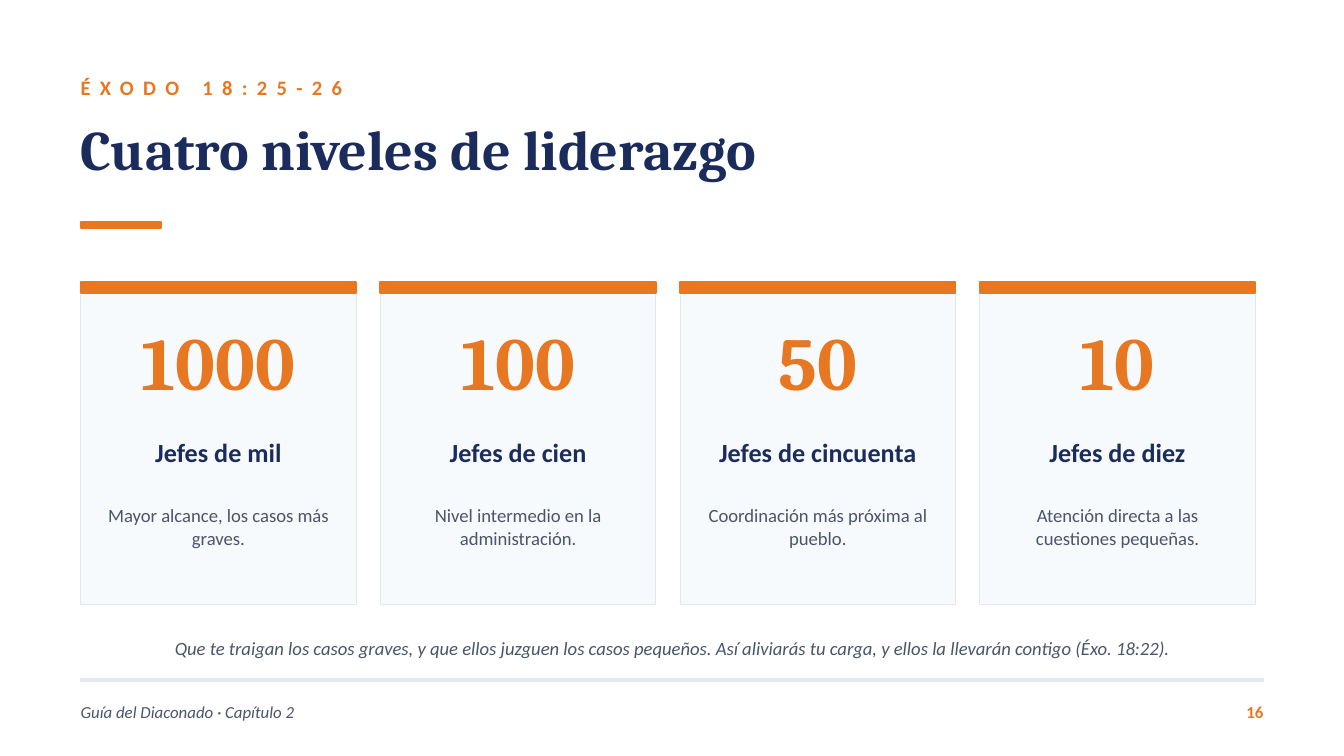
import pptx
import pptx.dml.color
import pptx.enum.shapes
import pptx.enum.text
import pptx.util

Inches = pptx.util.Inches
ORANGE, NAVY, GRAY = "E87722", "1A2B5C", "4A5568"
PALE, BORDER = "F7FAFC", "E2E8F0"


def color(value):
    return pptx.dml.color.RGBColor.from_string(value)


class Deck:
    """Holds the style and the current slide, and draws each kind of element."""

    heading, body = "Cambria", "Calibri"
    aligns = {
        "l": pptx.enum.text.PP_ALIGN.LEFT,
        "c": pptx.enum.text.PP_ALIGN.CENTER,
        "r": pptx.enum.text.PP_ALIGN.RIGHT,
    }

    def __init__(self, prs):
        self.s = prs.slides.add_slide(prs.slide_layouts[6])
        self.s.background.fill.solid()
        self.s.background.fill.fore_color.rgb = color("FFFFFF")

    def rect(self, x, y, w, h, fill, line=None, width=1):
        sp = self.s.shapes.add_shape(
            pptx.enum.shapes.MSO_SHAPE.RECTANGLE,
            Inches(x), Inches(y), Inches(w), Inches(h))
        sp.shadow.inherit = False
        sp.fill.solid()
        sp.fill.fore_color.rgb = color(fill)
        sp.line.color.rgb = color(line or fill)
        sp.line.width = pptx.util.Pt(width)

    def text(self, x, y, w, h, text, size, fill, font=body, bold=False,
             italic=False, align="l", middle=False, spacing=None):
        sp = self.s.shapes.add_textbox(Inches(x), Inches(y), Inches(w), Inches(h))
        tf = sp.text_frame
        tf.word_wrap = True
        tf.margin_left = tf.margin_right = tf.margin_top = tf.margin_bottom = 0
        anchor = pptx.enum.text.MSO_ANCHOR
        tf.vertical_anchor = anchor.MIDDLE if middle else anchor.TOP
        p = tf.paragraphs[0]
        p.alignment = self.aligns[align]
        r = p.add_run()
        r.text = text
        r.font.name = font
        r.font.size = pptx.util.Pt(size)
        r.font.bold = bold
        r.font.italic = italic
        r.font.color.rgb = color(fill)
        if spacing:
            r.font._element.set("spc", str(spacing * 100))

    def card(self, x, number, title, description):
        y, w, pad = 2.1, 2.05, 0.12
        self.rect(x, y, w, 2.4, PALE, BORDER, 0.5)
        self.rect(x, y, w, 0.08, ORANGE)
        self.text(x, y + 0.25, w, 0.8, number, 40, ORANGE, self.heading,
                  bold=True, align="c")
        inner = w - 2 * pad
        self.text(x + pad, y + 1.15, inner, 0.5, title, 14, NAVY,
                  bold=True, align="c")
        self.text(x + pad, y + 1.65, inner, 0.65, description, 10, GRAY, align="c")


def main():
    prs = pptx.Presentation()
    prs.slide_width = Inches(10)
    prs.slide_height = Inches(10 * 9 / 16)
    deck = Deck(prs)
    left, width = 0.6, 8.8

    deck.text(left, 0.5, 6, 0.3, "ÉXODO 18:25-26", 11, ORANGE,
              bold=True, middle=True, spacing=5)
    deck.text(left, 0.85, 9, 0.7, "Cuatro niveles de liderazgo", 30, NAVY,
              deck.heading, bold=True)
    deck.rect(left, 1.65, 0.6, 0.05, ORANGE)

    levels = [
        ("1000", "Jefes de mil", "Mayor alcance, los casos más graves."),
        ("100", "Jefes de cien", "Nivel intermedio en la administración."),
        ("50", "Jefes de cincuenta", "Coordinación más próxima al pueblo."),
        ("10", "Jefes de diez", "Atención directa a las cuestiones pequeñas."),
    ]
    for i, level in enumerate(levels):
        deck.card(left + i * 2.23, *level)

    deck.text(left, 4.65, width, 0.35,
              "Que te traigan los casos graves, y que ellos juzguen los casos "
              "pequeños. Así aliviarás tu carga, y ellos la llevarán contigo "
              "(Éxo. 18:22).", 10, GRAY, italic=True, align="c", middle=True)
    deck.rect(left, 5.05, width, 0.02, BORDER)
    deck.text(left, 5.15, 6, 0.3, "Guía del Diaconado · Capítulo 2", 9, GRAY,
              italic=True, middle=True)
    deck.text(8.9, 5.15, 0.5, 0.3, "16", 9, ORANGE,
              bold=True, align="r", middle=True)
    prs.save("out.pptx")


if __name__ == "__main__":
    main()
